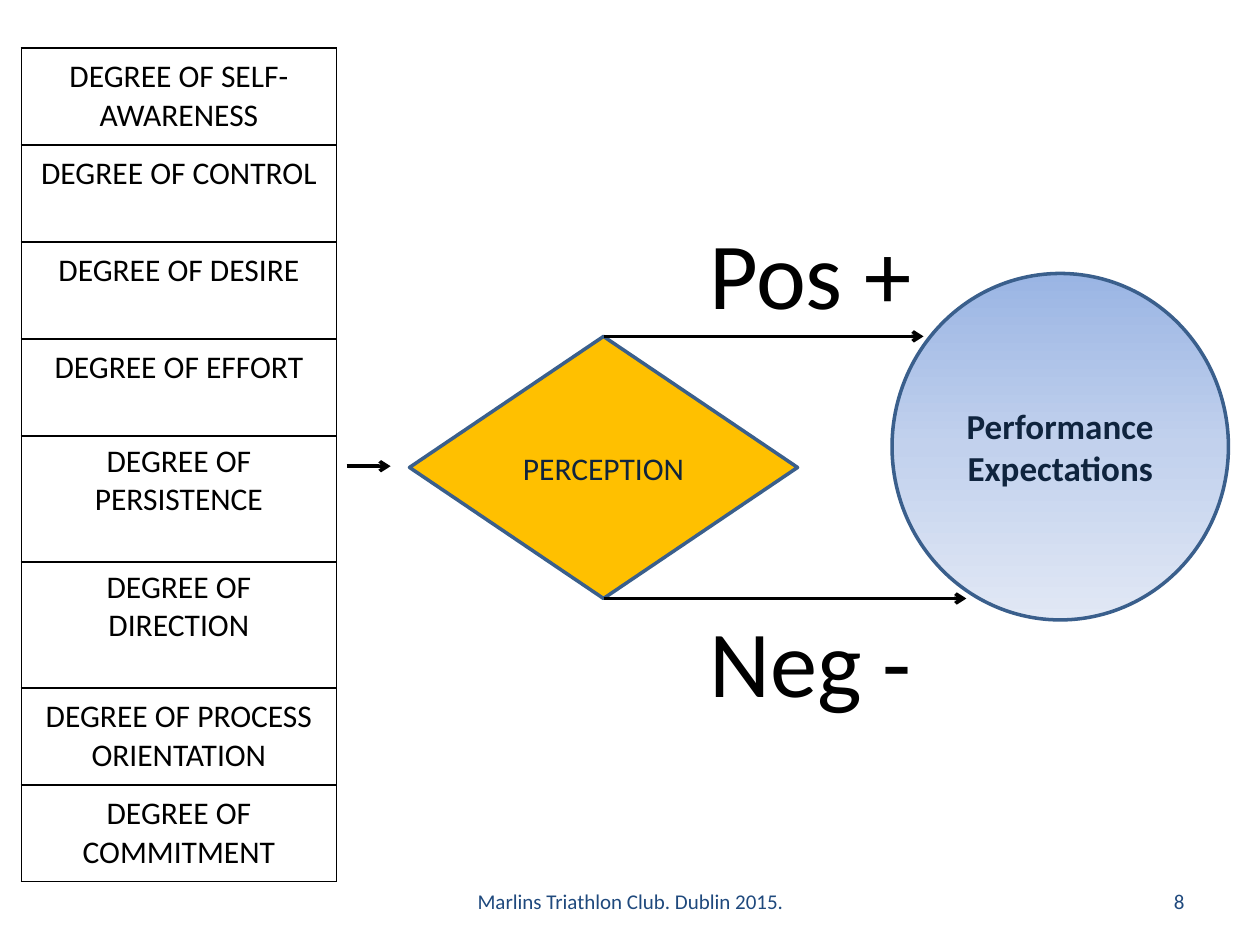
from copy import deepcopy

from lxml import etree
from pptx import Presentation
from pptx.dml.color import RGBColor
from pptx.enum.shapes import MSO_CONNECTOR, MSO_SHAPE
from pptx.enum.text import MSO_ANCHOR, PP_ALIGN
from pptx.oxml.ns import qn
from pptx.util import Emu, Pt

PX = 9144  # EMU per px, 100 px to the inch

BLACK = RGBColor(0x00, 0x00, 0x00)
NAVY = RGBColor(0x0F, 0x24, 0x3E)
FOOTER_BLUE = RGBColor(0x1F, 0x49, 0x7D)
OUTLINE = RGBColor(0x3A, 0x5F, 0x8C)
AMBER = RGBColor(0xFF, 0xC0, 0x00)
SKY = [RGBColor(0x9A, 0xB5, 0xE4), RGBColor(0xC2, 0xD1, 0xED), RGBColor(0xE1, 0xE8, 0xF5)]


def px(n):
    return Emu(n * PX)


class SlideBuilder:
    font = "Calibri"
    line_width = Pt(2)

    def __init__(self, slide):
        self.slide = slide

    def put_text(self, tf, text, color, size, align=PP_ALIGN.CENTER, **fmt):
        p = tf.paragraphs[0]
        p.alignment = align
        r = p.add_run()
        r.text = text
        r.font.color.rgb = color
        for name, value in {"name": self.font, "size": Pt(size), **fmt}.items():
            setattr(r.font, name, value)

    def label(self, box, text, color, size, align, anchor=MSO_ANCHOR.TOP, wrap=True):
        tf = self.slide.shapes.add_textbox(*map(px, box)).text_frame
        tf.word_wrap = wrap
        tf.vertical_anchor = anchor
        self.put_text(tf, text, color, size, align)

    def shape(self, kind, box, fill, text, size, **fmt):
        """Draw an outlined shape; a list of colours gives a vertical gradient."""
        sp = self.slide.shapes.add_shape(kind, *map(px, box))
        sp.shadow.inherit = False
        sp.line.color.rgb = OUTLINE
        sp.line.width = self.line_width
        if isinstance(fill, list):
            self.gradient(sp, fill)
        else:
            sp.fill.solid()
            sp.fill.fore_color.rgb = fill
        sp.text_frame.word_wrap = True
        sp.text_frame.vertical_anchor = MSO_ANCHOR.MIDDLE
        self.put_text(sp.text_frame, text, NAVY, size, **fmt)

    def gradient(self, sp, colors):
        sp.fill.gradient()
        sp.fill.gradient_angle = 270
        stops = sp._element.spPr.find(qn("a:gradFill")).find(qn("a:gsLst"))
        while len(stops) < len(colors):
            stops.append(deepcopy(stops[0]))
        for i, (stop, color) in enumerate(zip(sp.fill.gradient_stops, colors)):
            stop.position = i / (len(colors) - 1)
            stop.color.rgb = color

    def arrow(self, x1, x2, y):
        cx = self.slide.shapes.add_connector(
            MSO_CONNECTOR.STRAIGHT, px(x1), px(y), px(x2), px(y))
        cx.line.color.rgb = BLACK
        cx.line.width = self.line_width
        etree.SubElement(cx.line._get_or_add_ln(), qn("a:tailEnd"), type="arrow")
        etree.SubElement(cx._element.spPr, qn("a:effectLst"))

    def table(self, left, top, width, rows):
        """Draw a one-column table from (text, row height, top margin) rows."""
        height = sum(row[1] for row in rows)
        tbl = self.slide.shapes.add_table(
            len(rows), 1, *map(px, (left, top, width, height))).table
        tbl.first_row = tbl.horz_banding = False
        for i, (text, row_height, margin) in enumerate(rows):
            tbl.rows[i].height = px(row_height)
            cell = tbl.cell(i, 0)
            cell.margin_left = cell.margin_right = px(11)
            cell.margin_top, cell.margin_bottom = px(margin), px(5)
            cell.vertical_anchor = MSO_ANCHOR.TOP
            self.put_text(cell.text_frame, text, BLACK, 18)
            self.borders(cell)
            cell.fill.background()

    def borders(self, cell):
        tc_pr = cell._tc.get_or_add_tcPr()
        for side in ("lnL", "lnR", "lnT", "lnB"):
            ln = etree.SubElement(tc_pr, qn(f"a:{side}"), w=str(Pt(1)))
            fill = etree.SubElement(ln, qn("a:solidFill"))
            etree.SubElement(fill, qn("a:srgbClr"), val=str(BLACK))


def main():
    prs = Presentation()
    prs.slide_width, prs.slide_height = px(1000), px(750)
    s = SlideBuilder(prs.slides.add_slide(prs.slide_layouts[6]))

    # Footer and slide number
    s.label((342, 695, 317, 40), "Marlins Triathlon Club. Dublin 2015.", FOOTER_BLUE, 12,
            PP_ALIGN.CENTER, MSO_ANCHOR.MIDDLE)
    s.label((717, 695, 233, 40), "8", FOOTER_BLUE, 12, PP_ALIGN.RIGHT, MSO_ANCHOR.MIDDLE)

    # Perception leading to expectations
    s.shape(MSO_SHAPE.OVAL, (708, 217, 267, 275), SKY, "Performance Expectations", 20, bold=True)
    s.shape(MSO_SHAPE.FLOWCHART_DECISION, (325, 267, 308, 208), AMBER, "PERCEPTION", 18)
    s.arrow(479, 733, 267)
    s.arrow(479, 767, 475)
    for text, top in (("Pos +", 166), ("Neg -", 474)):
        s.label((553, top, 182, 101), text, BLACK, 54, PP_ALIGN.LEFT, wrap=False)

    # Factors feeding into perception
    factors = ("SELF-AWARENESS", "CONTROL", "DESIRE", "EFFORT", "PERSISTENCE",
               "DIRECTION", "PROCESS ORIENTATION", "COMMITMENT")
    tall = ("PERSISTENCE", "DIRECTION")
    rows = [(f"DEGREE OF {name}", *((100, 5) if name in tall else (77, 8)))
            for name in factors]
    s.table(17, 38, 250, rows)
    s.arrow(275, 310, 370)

    prs.save("out.pptx")


if __name__ == "__main__":
    main()
